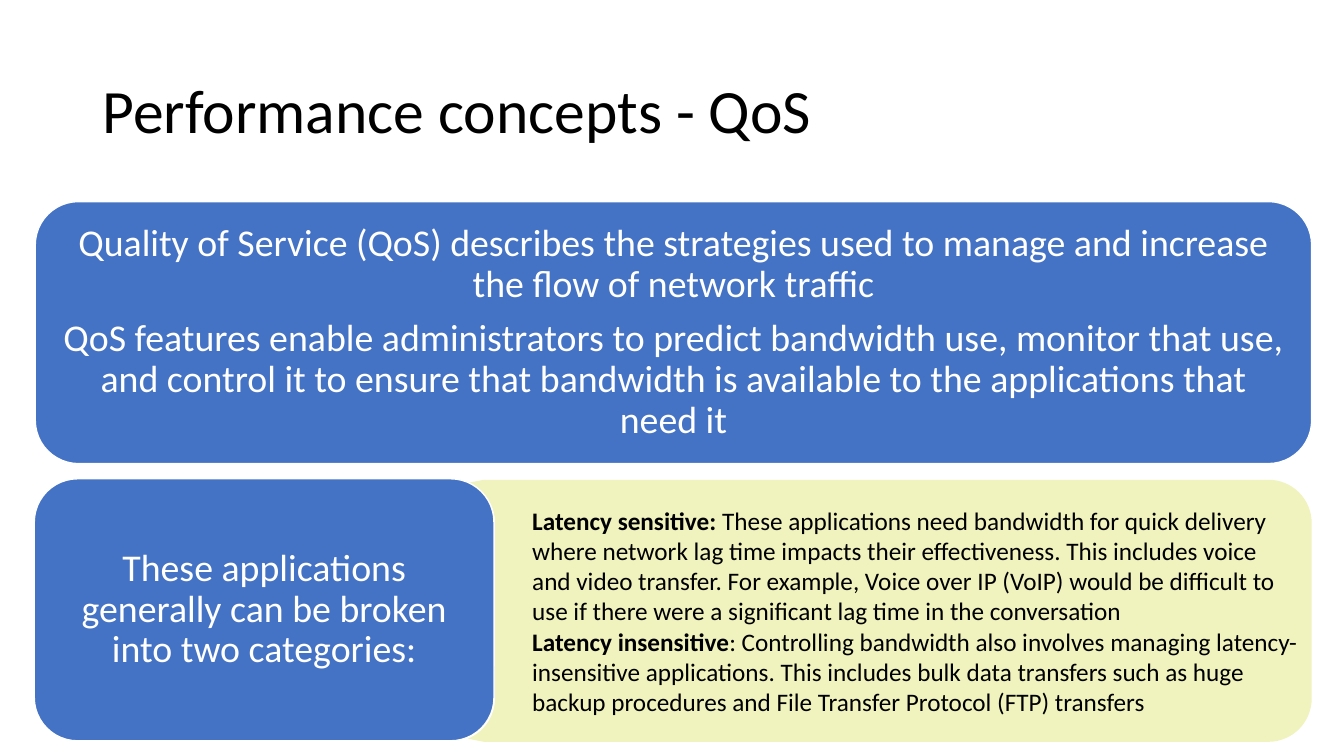
from dataclasses import dataclass
from math import cos, radians, sin

from pptx import Presentation
from pptx.dml.color import RGBColor as RGB
from pptx.enum.shapes import MSO_SHAPE as SHAPE
from pptx.enum.text import MSO_ANCHOR as ANCHOR, PP_ALIGN as ALIGN
from pptx.util import Inches, Pt


@dataclass(frozen=True)
class Theme:
    font: str = "Calibri"
    blue: RGB = RGB(0x44, 0x72, 0xC4)
    pale: RGB = RGB(0xF0, 0xF3, 0xBD)
    white: RGB = RGB(255, 255, 255)
    black: RGB = RGB(0, 0, 0)
    title: int = 44
    card: int = 27
    body: int = 18


theme = Theme()


def write(shape, paras, size, color=theme.black, align=ALIGN.LEFT,
          anchor=ANCHOR.MIDDLE, margins=(0.1, 0.05), lines=0.9, after=0):
    """Fill a shape with paragraphs, each a list of (text, bold) runs."""
    frame = shape.text_frame
    frame.word_wrap = True
    frame.vertical_anchor = anchor
    frame.margin_left = frame.margin_right = Inches(margins[0])
    frame.margin_top = frame.margin_bottom = Inches(margins[1])
    for i, runs in enumerate(paras):
        para = frame.add_paragraph() if i else frame.paragraphs[0]
        para.alignment = align
        para.line_spacing = lines
        para.space_after = Pt(after)
        for text, bold in runs:
            run = para.add_run()
            run.text = text
            run.font.name = theme.font
            run.font.size = Pt(size)
            run.font.bold = bold
            run.font.color.rgb = color


def arc(x, y, start, end, steps=16):
    """Points on a card corner, in degrees clockwise from the right."""
    angles = [radians(start + (end - start) * i / steps) for i in range(steps + 1)]
    return [(x + radius * cos(a), y + radius * sin(a)) for a in angles]


deck = Presentation()
deck.slide_width, deck.slide_height = Inches(13.33), Inches(7.5)
slide = deck.slides.add_slide(deck.slide_layouts[6])
shapes = slide.shapes

title = shapes.add_textbox(Inches(0.92), Inches(0.4), Inches(11.5), Inches(1.45))
write(title, [[("Performance concepts - QoS", False)]], theme.title)

# Pale panel: round on the right, hollowed on the left to hug the blue card
height, radius = 2.6, 0.43
top, right, edge = 4.76, 13.01, 4.91
upper, lower = top + radius, top + height - radius
outer, inner = right - radius, edge - radius
outline = [(4.8, top),
           *arc(outer, upper, -90, 0), *arc(outer, lower, 0, 90),
           (4.8, top + height),
           *arc(inner, lower, 68, 0), *arc(inner, upper, 0, -68)]
points = [(Inches(x), Inches(y)) for x, y in outline]
pen = shapes.build_freeform(*points[0])
pen.add_line_segments(points[1:], close=True)
panel = pen.convert_to_shape()
panel.shadow.inherit = False
panel.fill.solid()
panel.fill.fore_color.rgb = theme.pale
panel.line.fill.background()

cards = [
    (0.35, 2, 12.66, [
        "Quality of Service (QoS) describes the strategies used to manage and "
        "increase the flow of network traffic",
        "QoS features enable administrators to predict bandwidth use, monitor "
        "that use, and control it to ensure that bandwidth is available to the "
        "applications that need it"]),
    (0.34, 4.75, 4.56, [
        "These applications generally can be broken into two categories:"]),
]
for left, y, width, texts in cards:
    card = shapes.add_shape(SHAPE.ROUNDED_RECTANGLE, Inches(left), Inches(y),
                            Inches(width), Inches(height))
    card.adjustments[0] = radius / height
    card.shadow.inherit = False
    card.fill.solid()
    card.fill.fore_color.rgb = theme.blue
    card.line.color.rgb = theme.white
    card.line.width = Pt(1)
    write(card, [[(text, False)] for text in texts], theme.card, theme.white,
          ALIGN.CENTER, margins=(0.11, 0.05), after=9.5)

kinds = [
    [("Latency sensitive: ", True),
     ("These applications need bandwidth for quick delivery where network lag "
      "time impacts their effectiveness. This includes voice and video transfer. "
      "For example, Voice over IP (VoIP) would be difficult to use if there were "
      "a significant lag time in the conversation", False)],
    [("Latency insensitive", True),
     (": Controlling bandwidth also involves managing latency-insensitive "
      "applications. This includes bulk data transfers such as huge backup "
      "procedures and File Transfer Protocol (FTP) transfers", False)],
]
notes = shapes.add_textbox(Inches(5.18), Inches(4.96), Inches(7.81), Inches(2.22))
write(notes, kinds, theme.body, anchor=ANCHOR.TOP, lines=1.0)

deck.save("out.pptx")
